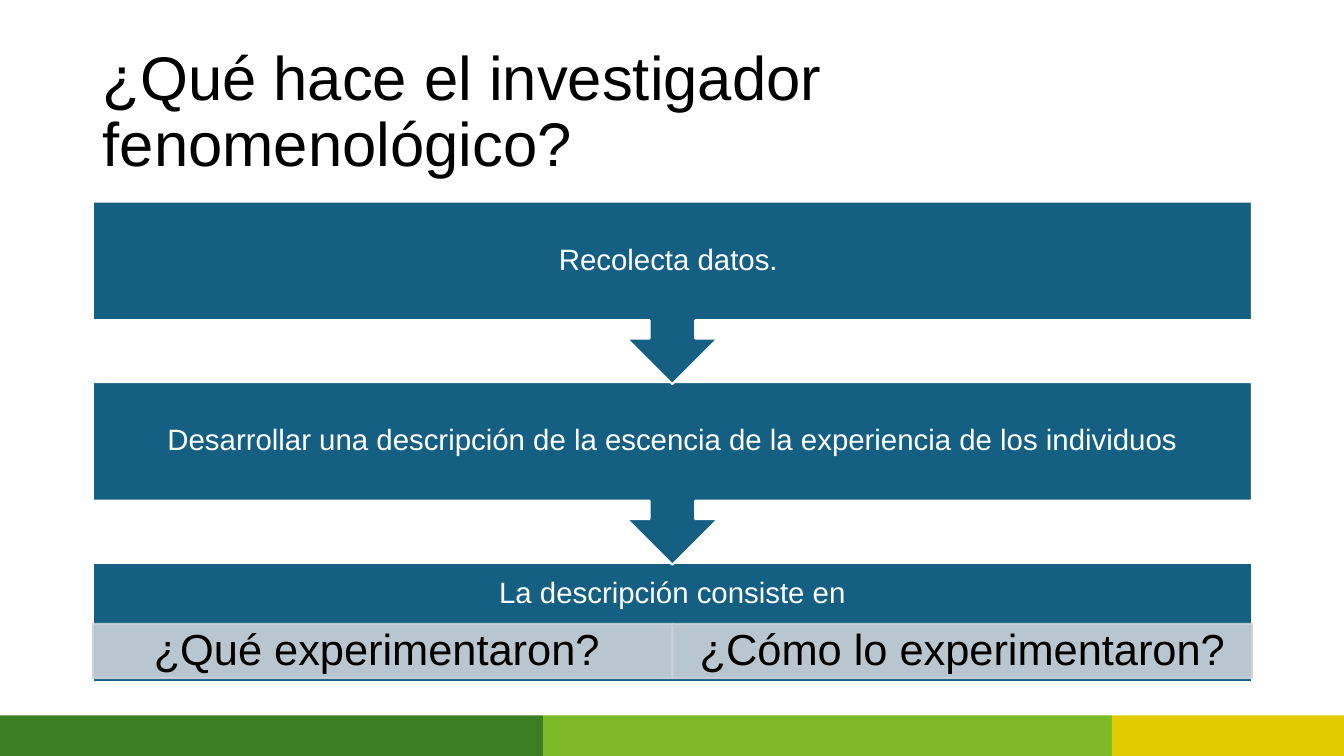
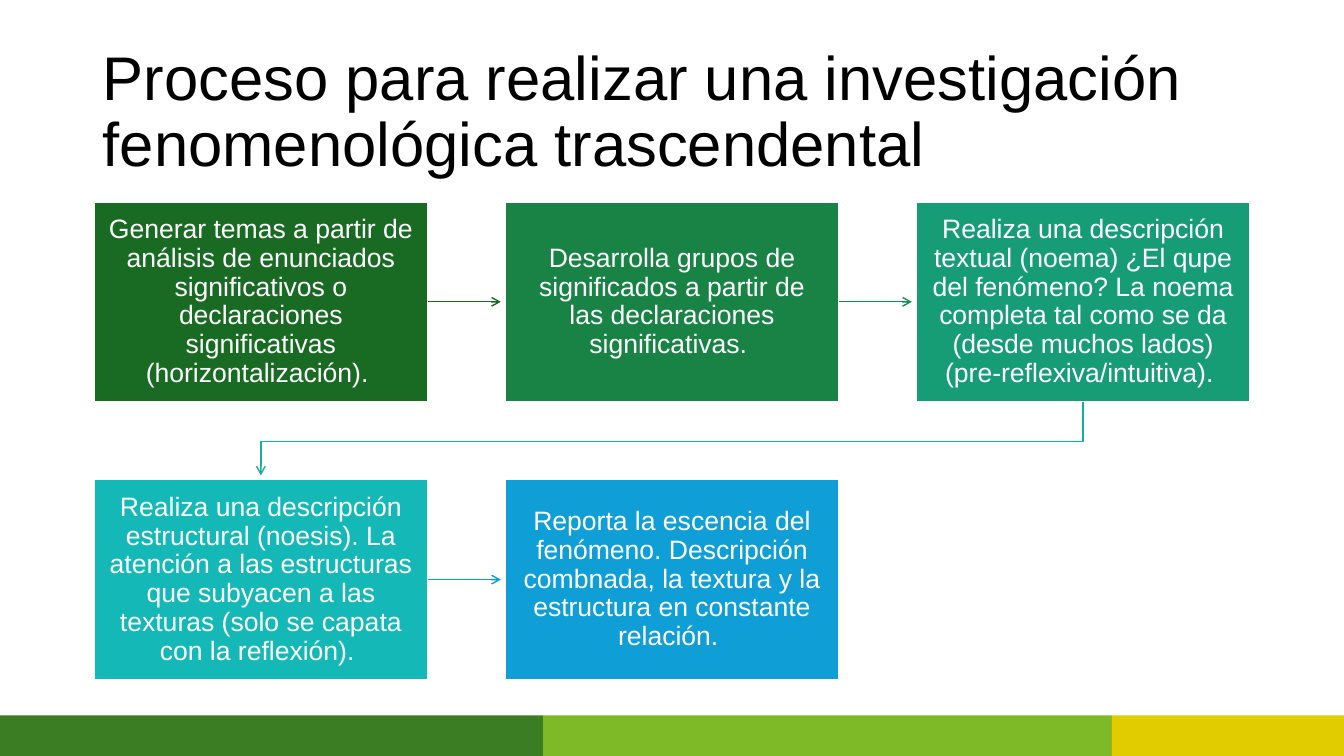
from dataclasses import dataclass

from pptx import Presentation
from pptx.dml.color import RGBColor
from pptx.enum import shapes, text
from pptx.oxml import ns, xmlchemy
from pptx.util import Cm, Pt


@dataclass(frozen=True)
class Theme:
    font: str = "Arial"
    title_size: int = 44
    step_size: int = 21
    question_size: int = 31
    process_size: int = 19
    ink: str = "000000"
    paper: str = "FFFFFF"
    step: str = "156082"
    question: str = "CCD2D8"
    bands: tuple = ("3B7D23", "7EBA27", "E1CC00")


T = Theme()
SHAPE, ALIGN = shapes.MSO_SHAPE, text.PP_ALIGN

# Content
STEPS_TITLE = "¿Qué hace el investigador fenomenológico?"
STEPS = [
    "Recolecta datos. ",
    "Desarrollar una descripción de la escencia de la experiencia de los individuos",
]
LAST_STEP = "La descripción consiste en"
QUESTIONS = ["¿Qué experimentaron? ", "¿Cómo lo experimentaron?"]

PROCESS_TITLE = "Proceso para realizar una investigación fenomenológica trascendental"
# Text, box colour, colour of the arrow that leaves the box
PROCESS = [
    ("Generar temas a partir de análisis de enunciados significativos o "
     "declaraciones significativas (horizontalización). ", "196B24", "196B24"),
    ("Desarrolla grupos de significados a partir de las declaraciones "
     "significativas. ", "198345", "188C54"),
    ("Realiza una descripción textual (noema) ¿El qupe del fenómeno? La noema "
     "completa tal como se da (desde muchos lados) (pre-reflexiva/intuitiva). ",
     "179D76", "15AF9F"),
    ("Realiza una descripción estructural (noesis). La atención a las estructuras "
     "que subyacen a las texturas (solo se capata con la reflexión). ",
     "14B8B7", "0F9ED5"),
    ("Reporta la escencia del fenómeno. Descripción combnada, la textura y la "
     "estructura en constante relación. ", "0F9ED5", None),
]

# Layout, in centimetres
WIDTH, HEIGHT = 33.87, 19.05
LEFT, TOP, BODY_WIDTH = 2.34, 5.08, 29.21
BAND_TOP, BAND_EDGES = 18.03, (0, 13.69, 28.02, WIDTH)


def rgb(color):
    return RGBColor.from_string(color)


def write(tf, words, size, color=T.paper, align=ALIGN.CENTER, insets=(0.25, 0.13, 0.25, 0.13)):
    """Fill a text frame with one paragraph; insets are left, top, right, bottom."""
    tf.word_wrap = True
    tf.vertical_anchor = text.MSO_ANCHOR.MIDDLE
    tf.margin_left, tf.margin_top, tf.margin_right, tf.margin_bottom = map(Cm, insets)
    p = tf.paragraphs[0]
    p.alignment, p.line_spacing = align, 0.9
    r = p.add_run()
    r.text = words
    r.font.name, r.font.size, r.font.color.rgb = T.font, Pt(size), rgb(color)


def add_box(s, kind, left, top, width, height, fill, line=None, opacity=None):
    sp = s.shapes.add_shape(kind, Cm(left), Cm(top), Cm(width), Cm(height))
    sp.shadow.inherit = False
    sp.fill.solid()
    sp.fill.fore_color.rgb = rgb(fill)
    if line:
        sp.line.color.rgb, sp.line.width = rgb(line), Pt(1.5)
    else:
        sp.line.fill.background()
    if opacity:
        for color in sp.fill._xPr.iter(ns.qn("a:srgbClr")):
            color.append(xmlchemy.OxmlElement("a:alpha"))
            color[-1].set("val", str(opacity * 1000))
    return sp


def style_arrow(sp, color):
    sp.line.color.rgb, sp.line.width = rgb(color), Pt(1)
    tail = xmlchemy.OxmlElement("a:tailEnd")
    tail.set("type", "arrow")
    sp.line._get_or_add_ln().append(tail)


def new_slide(prs, title):
    s = prs.slides.add_slide(prs.slide_layouts[6])
    box = s.shapes.add_textbox(Cm(LEFT), Cm(1.02), Cm(BODY_WIDTH), Cm(3.68))
    write(box.text_frame, title, T.title_size, T.ink, ALIGN.LEFT)
    for color, start, end in zip(T.bands, BAND_EDGES, BAND_EDGES[1:]):
        add_box(s, SHAPE.RECTANGLE, start, BAND_TOP, end - start, HEIGHT - BAND_TOP, color)
    return s


def steps_slide(prs):
    s = new_slide(prs, STEPS_TITLE)
    pitch, callout_height, panel_height = 4.55, 4.6, 3
    question_top, question_height = 15.72, 1.37
    pad = 0.4

    # Last step with its two questions
    panel_top = TOP + len(STEPS) * pitch
    panel = add_box(s, SHAPE.RECTANGLE, LEFT, panel_top, BODY_WIDTH, panel_height, T.step, T.paper)
    write(panel.text_frame, LAST_STEP, T.step_size, insets=(pad, pad, pad, pad + 1.4))
    cell_width = BODY_WIDTH / len(QUESTIONS)
    for i, question in enumerate(QUESTIONS):
        cell = add_box(s, SHAPE.RECTANGLE, LEFT + i * cell_width, question_top,
                       cell_width, question_height, T.question, T.question, opacity=90)
        write(cell.text_frame, question, T.question_size, T.ink, insets=(0.6, 0.1, 0.6, 0.1))

    # Callouts, the upper one in front
    for i, step in reversed(list(enumerate(STEPS))):
        callout = add_box(s, SHAPE.DOWN_ARROW_CALLOUT, LEFT, TOP + i * pitch,
                          BODY_WIDTH, callout_height, T.step, T.paper)
        write(callout.text_frame, step, T.step_size, insets=(pad,) * 4)


def process_slide(prs):
    s = new_slide(prs, PROCESS_TITLE)
    columns, left = 3, 2.36
    box_width, box_height = 8.43, 5.05
    column_pitch, row_pitch = 10.36, 7
    tip_gap, bend = 0.1, 1

    def corner(i):
        row, column = divmod(i, columns)
        return left + column * column_pitch, TOP + row * row_pitch

    for i, (words, fill, arrow_color) in enumerate(PROCESS):
        x, y = corner(i)
        box = add_box(s, SHAPE.RECTANGLE, x, y, box_width, box_height, fill, T.paper)
        write(box.text_frame, words, T.process_size, insets=(0.38,) * 4)
        if not arrow_color:
            continue
        next_x, next_y = corner(i + 1)
        if next_y == y:
            middle = Cm(y + box_height / 2)
            arrow = s.shapes.add_connector(shapes.MSO_CONNECTOR.STRAIGHT, Cm(x + box_width),
                                           middle, Cm(next_x - tip_gap), middle)
            arrow.begin_connect(box, 3)
            arrow._element.spPr.append(xmlchemy.OxmlElement("a:effectLst"))
        else:
            # Bent arrow down to the start of the next row
            start_x, end_x = x + box_width / 2, next_x + box_width / 2
            bottom = y + box_height
            pen = s.shapes.build_freeform(Cm(start_x), Cm(bottom))
            pen.add_line_segments([(Cm(start_x), Cm(bottom + bend)), (Cm(end_x), Cm(bottom + bend)),
                                   (Cm(end_x), Cm(next_y - tip_gap))], close=False)
            arrow = pen.convert_to_shape()
            arrow.fill.background()
            arrow.shadow.inherit = False
        style_arrow(arrow, arrow_color)


def main():
    prs = Presentation()
    prs.slide_width, prs.slide_height = Cm(WIDTH), Cm(HEIGHT)
    steps_slide(prs)
    process_slide(prs)
    prs.save("out.pptx")


if __name__ == "__main__":
    main()
